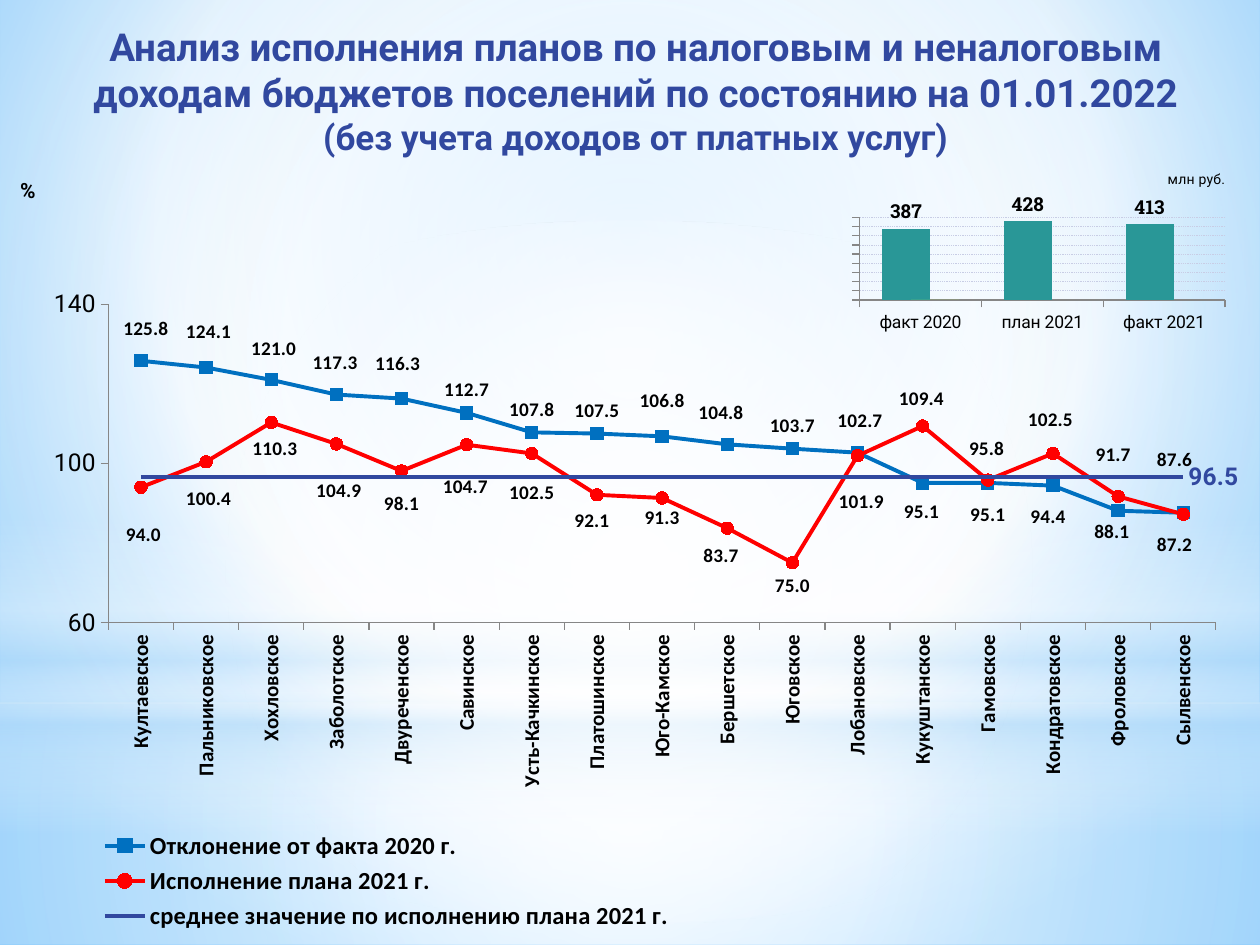
import pptx
import pptx.chart.data
import pptx.dml.color
import pptx.enum.chart
import pptx.enum.dml
import pptx.enum.shapes
import pptx.enum.text
import pptx.oxml
import pptx.oxml.ns
import pptx.util
from pptx.util import Inches

COLORS = {
    "title": "31489F", "growth": "0070C0", "plan": "FF0000", "bar": "299797",
    "empty_bar": "A7EA52", "text": "000000", "axis": "868686", "grid": "C8CDE5",
    "white": "FFFFFF", "sky": "B4DCFA", "sky_mid": "9ED5FF", "sky_deep": "5BB9FF",
}
CHART = pptx.enum.chart
SETTLEMENTS = [
    "Култаевское", "Пальниковское", "Хохловское", "Заболотское", "Двуреченское",
    "Савинское", "Усть-Качкинское", "Платошинское", "Юго-Камское", "Бершетское",
    "Юговское", "Лобановское", "Кукуштанское", "Гамовское", "Кондратовское",
    "Фроловское", "Сылвенское",
]
GROWTH = [125.8, 124.1, 121, 117.3, 116.3, 112.7, 107.8, 107.5, 106.8, 104.8,
          103.7, 102.7, 95.1, 95.1, 94.4, 88.1, 87.6]
PLAN = [94, 100.4, 110.3, 104.9, 98.1, 104.7, 102.5, 92.1, 91.3, 83.7,
        75, 101.9, 109.4, 95.8, 102.5, 91.7, 87.2]
AVERAGE = 96.5
GROWTH_SHIFTS = {
    0: (0.04, -0.07), 1: (0.02, -0.1), 2: (0.02, -0.06), 3: (-0.01, -0.07),
    4: (-0.03, -0.09), 8: (0, -0.1), 9: (-0.05, -0.07), 11: (0.02, -0.07),
    12: (-0.01, 0.41), 13: (0, 0.44), 14: (-0.04, 0.43), 15: (-0.05, 0.35),
    16: (-0.07, -0.24),
}
PLAN_SHIFTS = {
    0: (0.02, 0.2), 1: (0.02, 0.11), 2: (0.03, 0.03), 3: (0.02, 0.19),
    4: (0, 0.08), 5: (-0.01, 0.15), 6: (0, 0.13), 7: (-0.04, 0.03),
    8: (0, -0.02), 9: (-0.05, 0.04), 11: (0.03, 0.18), 12: (-0.01, -0.4),
    13: (-0.01, -0.43), 14: (-0.02, -0.45), 15: (-0.04, -0.51), 16: (-0.07, 0.06),
}


def rgb(name):
    return pptx.dml.color.RGBColor.from_string(COLORS[name])


def style_font(font, size, face, bold=False, color="text"):
    font.size = pptx.util.Pt(size)
    font.name = face
    font.bold = bold
    font.color.rgb = rgb(color)


def set_gradient(properties, stops, center=None):
    stop_xml = "".join(
        f'<a:gs pos="{position * 1000}"><a:srgbClr val="{COLORS[color]}">'
        f'<a:alpha val="{alpha * 1000}"/></a:srgbClr></a:gs>'
        for position, color, alpha in stops)
    if center:
        sides = " ".join(f'{side}="{value * 1000}"' for side, value in zip("ltrb", center))
        direction = f'<a:path path="circle"><a:fillToRect {sides}/></a:path>'
    else:
        direction = '<a:lin ang="5400000" scaled="0"/>'
    gradient = pptx.oxml.parse_xml(
        f'<a:gradFill {pptx.oxml.ns.nsdecls("a")} rotWithShape="1">'
        f'<a:gsLst>{stop_xml}</a:gsLst>{direction}</a:gradFill>')
    solid = properties.find(pptx.oxml.ns.qn("a:solidFill"))
    properties.replace(solid, gradient)


def set_layout(element, predecessor, target=None, edge=True, **fractions):
    for old in element.xpath("c:layout"):
        element.remove(old)
    parts = f'<c:layoutTarget val="{target}"/>' if target else ""
    if edge:
        parts += '<c:xMode val="edge"/><c:yMode val="edge"/>'
    parts += "".join(f'<c:{key} val="{value:.4f}"/>' for key, value in fractions.items())
    layout = pptx.oxml.parse_xml(
        f'<c:layout {pptx.oxml.ns.nsdecls("c")}><c:manualLayout>{parts}'
        '</c:manualLayout></c:layout>')
    if predecessor:
        element.xpath(predecessor)[-1].addnext(layout)
    else:
        element.insert(0, layout)


def draw_backdrop(slide, width, height):
    middle = (50, 50, 50, 50)
    slide.background.fill.solid()
    background = slide._element.xpath("p:cSld/p:bg/p:bgPr")[0]
    set_gradient(background, [(0, "sky_mid", 100), (60, "white", 100), (100, "sky_deep", 100)],
                 (20, 10, 20, 60))
    shape_types = pptx.enum.shapes.MSO_SHAPE
    layers = [
        (shape_types.RECTANGLE, 5.58, 1.92,
         [(0, "white", 91), (37, "white", 76), (100, "sky", 79)], middle),
        (shape_types.RECTANGLE, 0, 5.58,
         [(0, "white", 89), (48, "white", 62), (100, "sky", 79)], middle),
        (shape_types.RECTANGLE, 4.12, 2.5,
         [(0, "white", 0), (29, "white", 30), (45, "sky", 40), (55, "white", 26),
          (65, "sky", 60), (100, "white", 0)], None),
        (shape_types.OVAL, 1.75, 5.58, [(0, "white", 100), (56, "white", 0)], middle),
    ]
    for outline, top, layer_height, stops, center in layers:
        layer = slide.shapes.add_shape(outline, 0, Inches(top), width, Inches(layer_height))
        layer.shadow.inherit = False
        layer.line.fill.background()
        layer.fill.solid()
        set_gradient(layer._element.spPr, stops, center)


def add_heading(slide, left, top, width, height):
    frame = slide.shapes.add_textbox(left, top, width, height).text_frame
    frame.word_wrap = True
    frame.vertical_anchor = pptx.enum.text.MSO_ANCHOR.MIDDLE
    heading = frame.paragraphs[0]
    heading.text = ("Анализ исполнения планов по налоговым и неналоговым доходам бюджетов "
                    "поселений по состоянию на 01.01.2022\v(без учета доходов от платных услуг)")
    heading.alignment = pptx.enum.text.PP_ALIGN.CENTER
    for run, size in zip(heading.runs, (22, 20)):
        style_font(run.font, size, "Roboto", True, "title")


def style_axes(chart, unit, unit_size, unit_bold, unit_x, unit_y, low, high, step):
    chart.has_title = False
    values = chart.value_axis
    values.minimum_scale, values.maximum_scale, values.major_unit = low, high, step
    values.has_major_gridlines = False
    title = values.axis_title
    title.text_frame.text = unit
    style_font(title.text_frame.paragraphs[0].runs[0].font, unit_size, "Roboto", unit_bold)
    title._element.xpath(".//a:bodyPr")[0].set("rot", "0")
    set_layout(title._element, "c:tx", x=unit_x, y=unit_y)
    for axis in (values, chart.category_axis):
        axis.major_tick_mark = CHART.XL_TICK_MARK.OUTSIDE
        axis.format.line.color.rgb = rgb("axis")


def show_labels(series, position, number_format, face):
    labels = series.data_labels
    labels.show_value = True
    labels.position = position
    labels.number_format = number_format
    labels.number_format_is_linked = False
    style_font(labels.font, 11, face, True)


def shift_labels(series, shifts, position, width, height):
    for index, (across, down) in shifts.items():
        label = series.points[index].data_label
        style_font(label.font, 11, "Calibri", True)
        label.position = position
        element = series._element.xpath(f'c:dLbls/c:dLbl[c:idx/@val="{index}"]')[0]
        set_layout(element, "c:idx", edge=False,
                   x=Inches(across) / width, y=Inches(down) / height)


def add_settlements_chart(slide, left, top, width, height):
    data = pptx.chart.data.CategoryChartData(number_format="#,##0.0")
    data.categories = SETTLEMENTS
    data.add_series("Отклонение от факта 2020 г.", GROWTH)
    data.add_series("Исполнение плана 2021 г.", PLAN)
    data.add_series("среднее значение по исполнению плана 2021 г.", [AVERAGE] * len(SETTLEMENTS))
    chart = slide.shapes.add_chart(CHART.XL_CHART_TYPE.LINE_MARKERS, left, top, width, height,
                                   data).chart
    style_font(chart.font, 18, "Roboto")
    style_axes(chart, "%", 12, True, 0.016, 0.094, 60, 140, 40)
    chart.value_axis.tick_labels.number_format = "#,##0"
    chart.value_axis.tick_labels.number_format_is_linked = False
    style_font(chart.value_axis.tick_labels.font, 14, "Roboto")
    style_font(chart.category_axis.tick_labels.font, 12, "Calibri", True)
    chart.category_axis._element.xpath("c:txPr/a:bodyPr")[0].set("rot", "-5400000")
    chart.plots[0].vary_by_categories = False
    set_layout(chart._chartSpace.xpath("c:chart/c:plotArea")[0], None, "inner",
               x=0.089, y=0.249, w=0.879, h=0.373)

    chart.has_legend = True
    chart.legend.position = CHART.XL_LEGEND_POSITION.BOTTOM
    chart.legend.include_in_layout = False
    style_font(chart.legend.font, 14, "Calibri", True)
    set_layout(chart.legend._element, "c:legendPos", x=0.08, y=0.86, w=0.46, h=0.13)

    growth, plan, average = chart.plots[0].series
    markers, positions = CHART.XL_MARKER_STYLE, CHART.XL_LABEL_POSITION
    for series, color, marker in ((growth, "growth", markers.SQUARE),
                                  (plan, "plan", markers.CIRCLE),
                                  (average, "title", markers.NONE)):
        series.smooth = False
        series.format.line.color.rgb = rgb(color)
        series.format.line.width = pptx.util.Pt(2.25)
        series.marker.style = marker
        if marker != markers.NONE:
            series.marker.size = 7
            series.marker.format.fill.solid()
            series.marker.format.fill.fore_color.rgb = rgb(color)
            series.marker.format.line.color.rgb = rgb(color)
    for series, position, shifts in ((growth, positions.ABOVE, GROWTH_SHIFTS),
                                     (plan, positions.BELOW, PLAN_SHIFTS)):
        show_labels(series, position, "#,##0.0", "Calibri")
        shift_labels(series, shifts, position, width, height)
    last_label = average.points[len(SETTLEMENTS) - 1].data_label
    style_font(last_label.font, 14, "Roboto", True, "title")
    last_label.position = positions.RIGHT
    average.data_labels.show_value = False
    for leader in chart._chartSpace.xpath(".//c:showLeaderLines"):
        leader.set("val", "0")


def add_totals_chart(slide, left, top, width, height):
    data = pptx.chart.data.CategoryChartData(number_format="#,##0")
    data.categories = ["факт 2020", "план 2021", "факт 2021"]
    data.add_series("Series 1", [387, 428, 413])
    data.add_series("Series 2", [0, None, None])
    chart = slide.shapes.add_chart(CHART.XL_CHART_TYPE.COLUMN_CLUSTERED, left, top, width, height,
                                   data).chart
    style_font(chart.font, 18, "Times New Roman")
    chart.has_legend = False
    style_axes(chart, "млн руб.", 8, False, 0.82, 0.06, 0, 450, 50)
    values = chart.value_axis
    values.tick_label_position = CHART.XL_TICK_LABEL_POSITION.NONE
    values.has_major_gridlines = True
    grid = values.major_gridlines.format.line
    grid.color.rgb = rgb("grid")
    grid.width = pptx.util.Pt(0.5)
    grid.dash_style = pptx.enum.dml.MSO_LINE.ROUND_DOT
    style_font(chart.category_axis.tick_labels.font, 10, "Roboto")
    plot = chart.plots[0]
    plot.gap_width, plot.overlap, plot.vary_by_categories = 94, 40, False
    for series, color in zip(plot.series, ("bar", "empty_bar")):
        series.format.fill.solid()
        series.format.fill.fore_color.rgb = rgb(color)
    show_labels(plot.series[0], CHART.XL_LABEL_POSITION.OUTSIDE_END, "#,##0", "Roboto Slab")
    set_layout(chart._chartSpace.xpath("c:chart/c:plotArea")[0], None, "inner",
               x=0.03, y=0.301, w=0.945, h=0.397)


def main():
    deck = pptx.Presentation()
    deck.slide_width, deck.slide_height = Inches(10), Inches(7.5)
    slide = deck.slides.add_slide(deck.slide_layouts[6])
    draw_backdrop(slide, deck.slide_width, deck.slide_height)
    add_heading(slide, Inches(0.2), Inches(0.13), Inches(9.69), Inches(1.17))
    add_settlements_chart(slide, Inches(-0.03), Inches(0.73), Inches(10), Inches(6.77))
    add_totals_chart(slide, Inches(6.73), Inches(1.23), Inches(3.07), Inches(1.65))
    deck.save("out.pptx")


if __name__ == "__main__":
    main()
